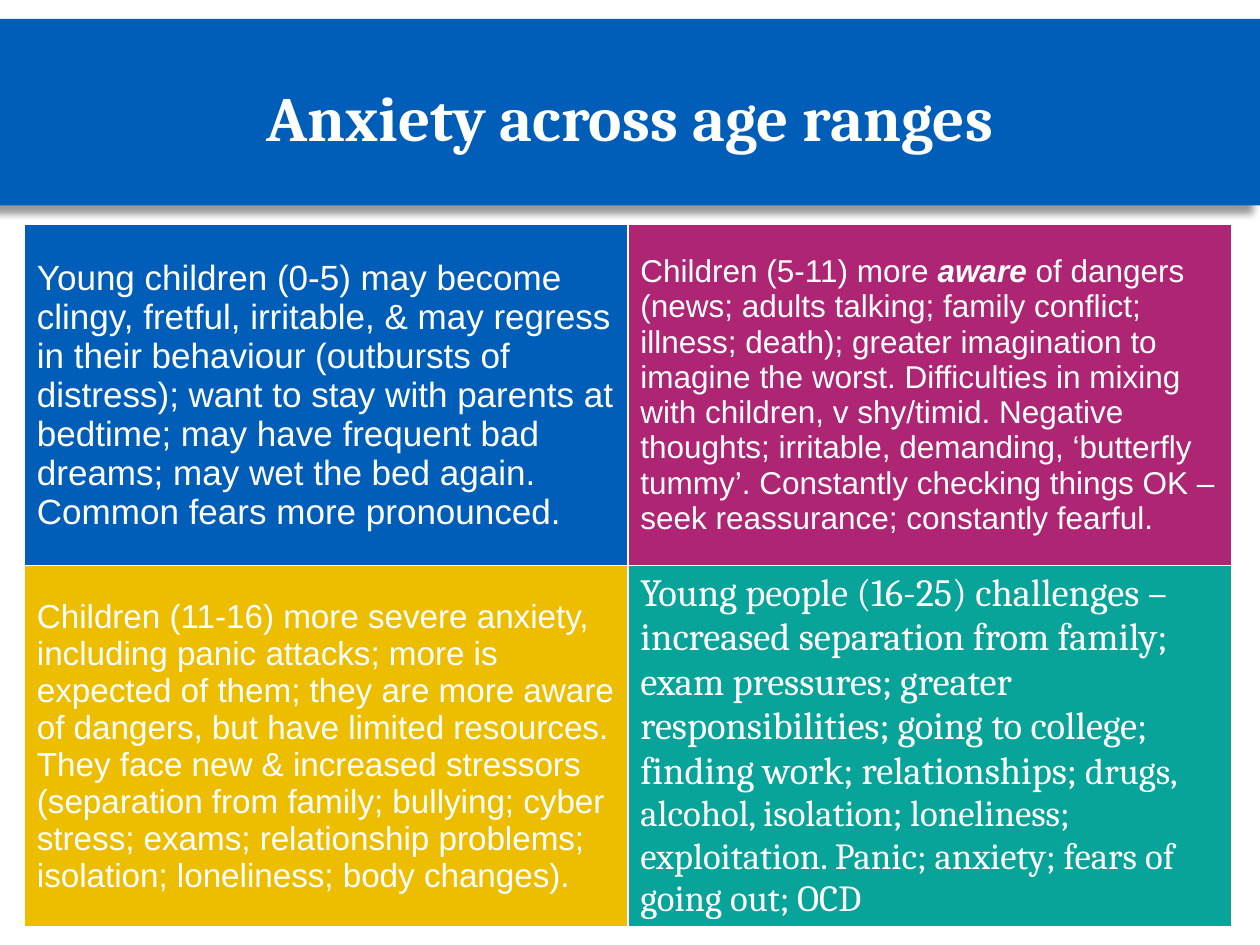
from dataclasses import dataclass

from lxml import etree
from pptx import Presentation
from pptx import util as u
from pptx.dml.color import RGBColor
from pptx.enum import shapes, text
from pptx.oxml import ns

WHITE = RGBColor(0xFF, 0xFF, 0xFF)
BLACK = RGBColor(0x00, 0x00, 0x00)
BLUE = RGBColor(0x00, 0x5E, 0xB8)
MAGENTA = RGBColor(0xAE, 0x25, 0x73)
YELLOW = RGBColor(0xED, 0xBE, 0x00)
TEAL = RGBColor(0x08, 0xA4, 0x99)

COLUMN_WIDTH = u.Pt(344.9)
ROW_HEIGHTS = (u.Pt(195), u.Pt(202.5))


@dataclass(frozen=True)
class Passage:
    words: str
    size: float
    font: str = "Arial"
    emphasis: bool = False


@dataclass(frozen=True)
class AgeGroup:
    fill: RGBColor
    passages: tuple[Passage, ...]


AGE_GROUPS = (
    AgeGroup(BLUE, (
        Passage("Young children (0-5) may become clingy, fretful, irritable, & may "
                "regress in their behaviour (outbursts of distress); want to stay with "
                "parents at bedtime; may have frequent bad dreams; may wet the bed "
                "again. Common fears more pronounced.", 20),
    )),
    AgeGroup(MAGENTA, (
        Passage("Children (5-11) more ", 18),
        Passage("aware ", 18, emphasis=True),
        Passage("of dangers (news; adults talking; family conflict; illness; death); "
                "greater imagination to imagine the worst. Difficulties in mixing with "
                "children, v shy/timid. Negative thoughts; irritable, demanding, "
                "‘butterfly tummy’. Constantly checking things OK –seek reassurance; "
                "constantly fearful.", 18),
    )),
    AgeGroup(YELLOW, (
        Passage("Children (11-16) more severe anxiety, including panic attacks; more is "
                "expected of them; they are more aware of dangers, but have limited "
                "resources. They face new & increased stressors (separation from "
                "family; bullying; cyber stress; exams; relationship problems; "
                "isolation; loneliness; body changes).", 19),
    )),
    AgeGroup(TEAL, (
        Passage("Young people (16-25) challenges –increased separation from family; "
                "exam pressures; greater responsibilities; going to college; finding "
                "work; relationships; ", 22, "Cambria"),
        Passage("drugs, alcohol, isolation; loneliness; exploitation. Panic; anxiety; "
                "fears of going out; OCD", 21, "Cambria"),
    )),
)


def add_text(paragraph, words: str, *, size: float, font: str,
             bold: bool = False, italic: bool = False) -> None:
    run = paragraph.add_run()
    run.text = words
    run.font.size = u.Pt(size)
    run.font.name = font
    run.font.bold = bold
    run.font.italic = italic
    run.font.color.rgb = WHITE


def add_child(parent, tag: str, **attributes: str):
    return etree.SubElement(parent, ns.qn(tag), attributes)


def add_band(slide) -> None:
    band = slide.shapes.add_shape(shapes.MSO_SHAPE.RECTANGLE, u.Pt(-1.4),
                                  u.Pt(10.8), u.Pt(721.4), u.Pt(106.6))
    band.fill.solid()
    band.fill.fore_color.rgb = BLUE
    band.line.fill.background()
    effects = add_child(band._element.spPr, "a:effectLst")
    shadow = add_child(effects, "a:outerShdw", blurRad=str(u.Pt(4)),
                       dist=str(u.Pt(6)), dir="8100000", rotWithShape="0")
    color = add_child(shadow, "a:srgbClr", val=str(BLACK))
    add_child(color, "a:alpha", val="40000")
    slide.shapes._spTree.insert(2, band._element)


def format_title(slide) -> None:
    title = slide.shapes.title
    title.left, title.top = u.Pt(36), u.Pt(21.6)
    title.width, title.height = u.Pt(648), u.Pt(90)
    title.text_frame.vertical_anchor = text.MSO_ANCHOR.MIDDLE
    paragraph = title.text_frame.paragraphs[0]
    paragraph.alignment = text.PP_ALIGN.CENTER
    add_text(paragraph, "Anxiety across age ranges", size=36, font="Cambria", bold=True)


def add_borders(cell) -> None:
    properties = cell._tc.get_or_add_tcPr()
    for index, side in enumerate(("a:lnL", "a:lnR", "a:lnT", "a:lnB")):
        border = add_child(properties, side, w=str(u.Pt(1)))
        add_child(add_child(border, "a:solidFill"), "a:srgbClr", val=str(WHITE))
        properties.insert(index, border)


def fill_cell(cell, group: AgeGroup) -> None:
    cell.fill.solid()
    cell.fill.fore_color.rgb = group.fill
    cell.vertical_anchor = text.MSO_ANCHOR.MIDDLE
    add_borders(cell)
    for passage in group.passages:
        add_text(cell.text_frame.paragraphs[0], passage.words, size=passage.size,
                 font=passage.font, bold=passage.emphasis, italic=passage.emphasis)


def add_age_table(slide) -> None:
    table = slide.shapes.add_table(2, 2, u.Pt(13.9), u.Pt(128.2),
                                   2 * COLUMN_WIDTH, sum(ROW_HEIGHTS)).table
    table.first_row = False
    table.horz_banding = False
    for column in table.columns:
        column.width = COLUMN_WIDTH
    for row, height in zip(table.rows, ROW_HEIGHTS):
        row.height = height
    for cell, group in zip(table.iter_cells(), AGE_GROUPS):
        fill_cell(cell, group)


def main() -> None:
    presentation = Presentation()
    presentation.slide_width, presentation.slide_height = u.Pt(720), u.Pt(540)
    slide = presentation.slides.add_slide(presentation.slide_layouts[5])
    add_band(slide)
    format_title(slide)
    add_age_table(slide)
    presentation.save("out.pptx")


if __name__ == "__main__":
    main()
